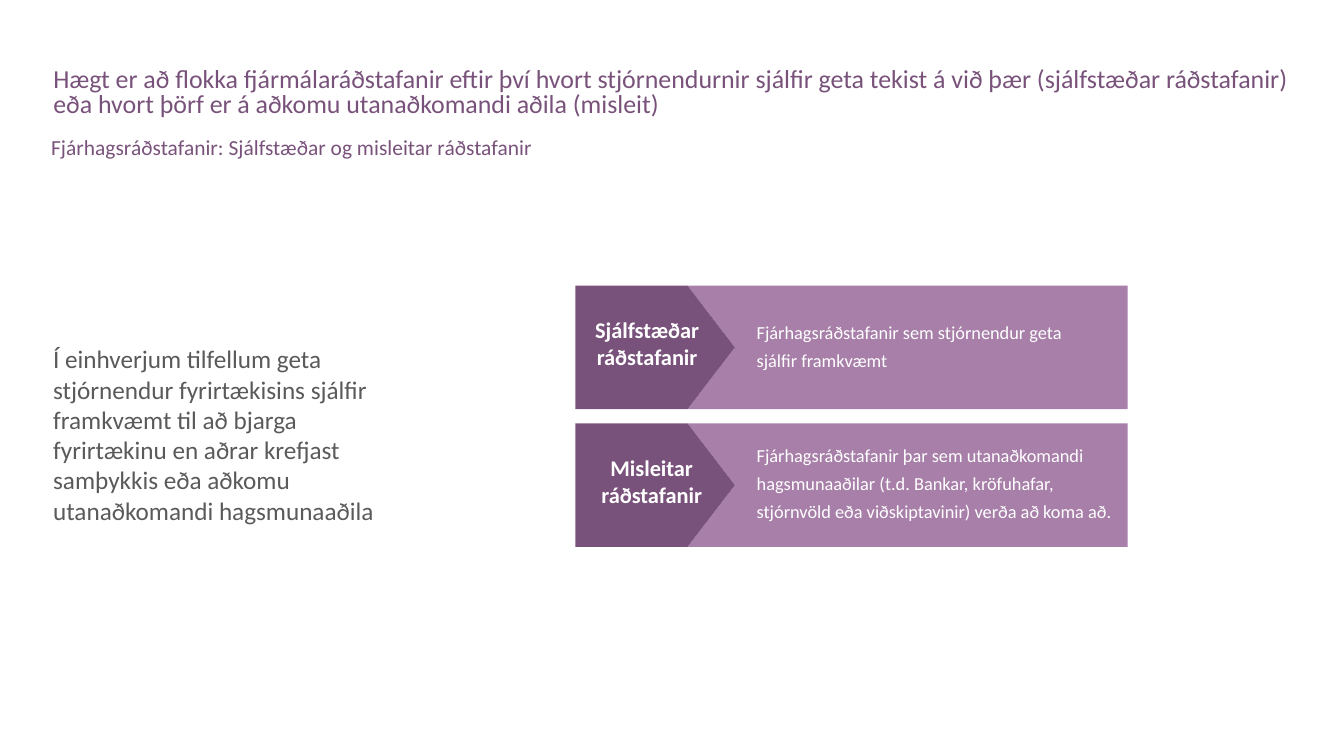
from dataclasses import dataclass

from pptx import Presentation
from pptx.dml.color import RGBColor
from pptx.enum.text import MSO_ANCHOR, MSO_AUTO_SIZE, PP_ALIGN
from pptx.util import Cm, Pt


@dataclass(frozen=True)
class Theme:
    font: str = "Calibri"
    dark: RGBColor = RGBColor(0x79, 0x52, 0x7B)
    light: RGBColor = RGBColor(0xA7, 0x7F, 0xA9)
    grey: RGBColor = RGBColor(0x59, 0x5A, 0x59)
    white: RGBColor = RGBColor(0xFF, 0xFF, 0xFF)
    title_size: float = 18.5
    subtitle_size: float = 15.3
    body_size: float = 18
    label_size: float = 16
    detail_size: float = 13.1


THEME = Theme()

TITLE = (
    "Hægt er að flokka fjármálaráðstafanir eftir því hvort stjórnendurnir sjálfir geta tekist á við þær "
    "(sjálfstæðar ráðstafanir) eða hvort þörf er á aðkomu utanaðkomandi aðila (misleit)"
)
SUBTITLE = "Fjárhagsráðstafanir: Sjálfstæðar og misleitar ráðstafanir"
BODY = (
    "Í einhverjum tilfellum geta stjórnendur fyrirtækisins sjálfir framkvæmt til að bjarga "
    "fyrirtækinu en aðrar krefjast samþykkis eða aðkomu utanaðkomandi hagsmunaaðila"
)

# Boxes are (left, top, width, height) in centimetres; row offsets are relative to the row.
MEASURES = [
    {
        "label": "Sjálfstæðar ráðstafanir",
        "label_box": (-0.08, 0.65, 3.78, 1.63),
        "detail": "Fjárhagsráðstafanir sem stjórnendur geta sjálfir framkvæmt",
        "detail_box": (4.32, 0.61, 8.81, 1.68),
    },
    {
        "label": "Misleitar ráðstafanir",
        "label_box": (-0.3, 0.65, 4.45, 1.63),
        "detail": "Fjárhagsráðstafanir þar sem utanaðkomandi hagsmunaaðilar (t.d. Bankar, kröfuhafar, "
                  "stjórnvöld eða viðskiptavinir) verða að koma að.",
        "detail_box": (4.32, 0.25, 9.6, 2.39),
    },
]
ROW_PITCH = 3.47
ROW_HEIGHT = 3.11
SHOULDER = 2.83
TIP = 4.02


def write_text(shape, text, size, color, bold=False, spacing=1.0,
               alignment=PP_ALIGN.LEFT, anchor=MSO_ANCHOR.TOP):
    frame = shape.text_frame
    frame.text = text
    paragraph = frame.paragraphs[0]
    formats = [
        (frame, {"word_wrap": True, "auto_size": MSO_AUTO_SIZE.NONE, "vertical_anchor": anchor}),
        (paragraph, {"alignment": alignment, "line_spacing": spacing, "space_before": Pt(0)}),
        (paragraph.font, {"name": THEME.font, "size": Pt(size), "bold": bold}),
    ]
    for target, values in formats:
        for name, value in values.items():
            setattr(target, name, value)
    paragraph.font.color.rgb = color


def add_text(slide, box, text, size, color, **text_format):
    shape = slide.shapes.add_textbox(*map(Cm, box))
    write_text(shape, text, size, color, **text_format)


def add_outline(slide, points, color):
    """Draw a closed, filled polygon through points in centimetres."""
    corners = [(Cm(x), Cm(y)) for x, y in points]
    builder = slide.shapes.build_freeform(*corners[0])
    builder.add_line_segments(corners[1:], close=True)
    shape = builder.convert_to_shape()
    shape.shadow.inherit = False
    shape.fill.solid()
    shape.fill.fore_color.rgb = color
    shape.line.fill.background()


def add_heading(slide, box):
    left, top, width, height = box
    title = slide.shapes.title
    for name, value in zip(("left", "top", "width", "height"), box):
        setattr(title, name, Cm(value))
    write_text(title, TITLE, THEME.title_size, THEME.dark, spacing=0.8)
    add_text(slide, (left - 0.05, top + 1.83, width + 0.05, 0.71), SUBTITLE,
             THEME.subtitle_size, THEME.dark, spacing=0.7)


def add_measure(slide, box, measure):
    """Place one row: a dark pointed label and the light panel it points into."""
    left, top, width, height = box
    right, bottom = left + width, top + height
    arrow_edge = [(left + SHOULDER, top), (left + TIP, top + height / 2), (left + SHOULDER, bottom)]
    add_outline(slide, arrow_edge + [(right, bottom), (right, top)], THEME.light)
    add_outline(slide, arrow_edge + [(left, bottom), (left, top)], THEME.dark)

    def inside(offset_box):
        x, y, box_width, box_height = offset_box
        return left + x, top + y, box_width, box_height

    add_text(slide, inside(measure["label_box"]), measure["label"], THEME.label_size,
             THEME.white, bold=True, alignment=PP_ALIGN.CENTER)
    add_text(slide, inside(measure["detail_box"]), measure["detail"], THEME.detail_size,
             THEME.white, spacing=1.27)


def add_measures(slide, left, top, width):
    for index, measure in enumerate(MEASURES):
        add_measure(slide, (left, top + index * ROW_PITCH, width, ROW_HEIGHT), measure)


def main():
    presentation = Presentation()
    presentation.slide_width = Cm(33.87)
    presentation.slide_height = Cm(19.05)
    slide = presentation.slides.add_slide(presentation.slide_layouts[5])
    add_heading(slide, (1.09, 1.6, 31.85, 1.63))
    add_text(slide, (1.09, 4.55, 8.86, 12.8), BODY, THEME.body_size, THEME.grey,
             anchor=MSO_ANCHOR.MIDDLE)
    add_measures(slide, 14.5, 7.2, 13.92)
    presentation.save("out.pptx")


if __name__ == "__main__":
    main()
